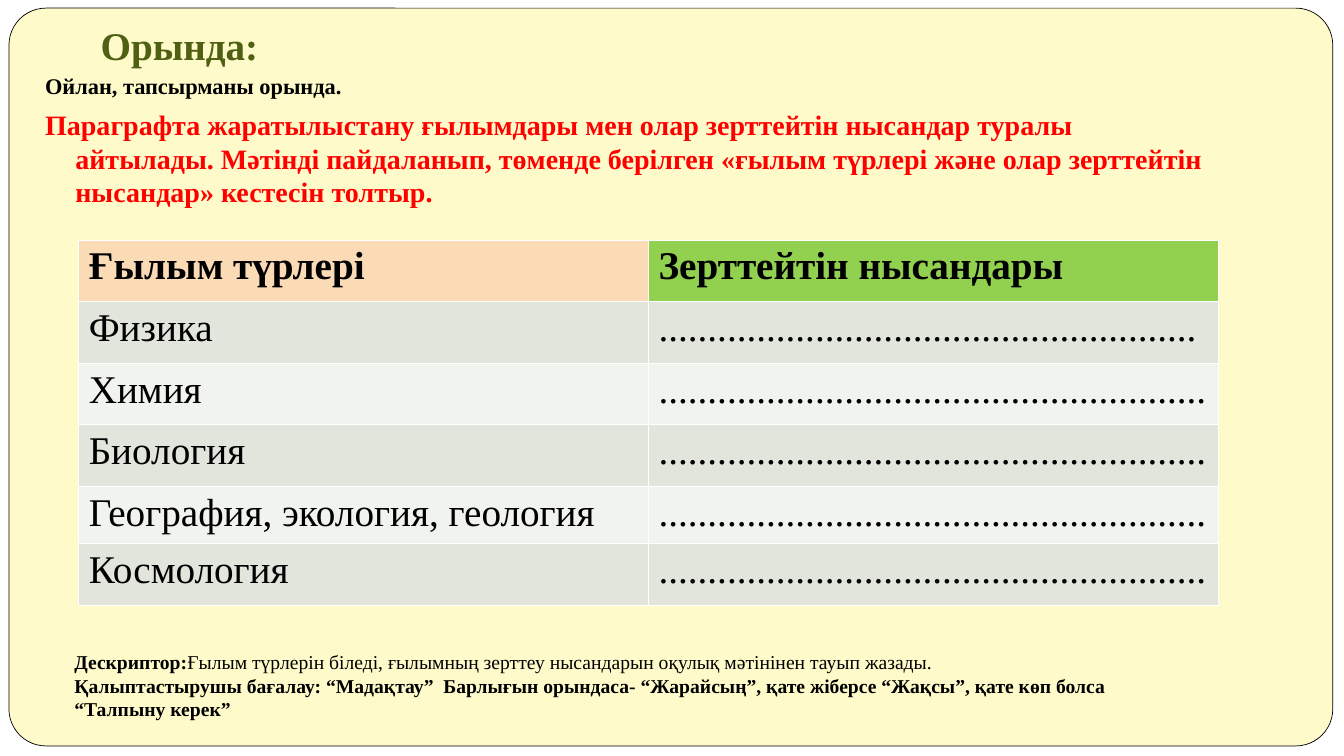
from dataclasses import dataclass

from pptx import Presentation, util as u
from pptx.dml.color import RGBColor
from pptx.enum import shapes, text
from pptx.oxml import parse_xml
from pptx.oxml.ns import nsdecls


@dataclass(frozen=True)
class Theme:
    font: str = "Times New Roman"
    paper: str = "FEFAC9"
    ink: str = "000000"
    heading: str = "4F6013"
    task: str = "FF0000"
    rule: str = "FFFFFF"
    header_fills: tuple = ("FADBB5", "92D050")
    band_fills: tuple = ("E1E5DC", "F0F3EE")
    large: int = 28
    medium: int = 20
    normal: int = 16
    small: int = 14
    thin: float = 0.45
    thick: float = 1.47


def write(paragraph, words, size, color, font, bold=False):
    run = paragraph.add_run()
    run.text = words
    run.font.name = font
    run.font.size = u.Pt(size)
    run.font.bold = bold
    run.font.color.rgb = RGBColor.from_string(color)


class Page:
    columns, rows = 48, 27

    def __init__(self, deck, theme):
        self.theme = theme
        self.column = deck.slide_width / self.columns
        self.row = deck.slide_height / self.rows
        self.slide = deck.slides.add_slide(deck.slide_layouts[6])

    def place(self, left, top, width, height):
        return (round(left * self.column), round(top * self.row),
                round(width * self.column), round(height * self.row))

    def frame(self, area, rounding):
        card = self.slide.shapes.add_shape(
            shapes.MSO_SHAPE.ROUNDED_RECTANGLE, *self.place(*area))
        card.adjustments[0] = rounding
        card.shadow.inherit = False
        card.fill.solid()
        card.fill.fore_color.rgb = RGBColor.from_string(self.theme.paper)
        card.line.color.rgb = RGBColor.from_string(self.theme.ink)
        card.line.width = u.Pt(0.5)

    def text(self, area, paragraphs, anchor=text.MSO_ANCHOR.TOP,
             top=0.05, bottom=0.05, before=0, hanging=0):
        body = self.slide.shapes.add_textbox(*self.place(*area)).text_frame
        body.word_wrap = True
        body.vertical_anchor = anchor
        body.margin_top, body.margin_bottom = u.Inches(top), u.Inches(bottom)
        for index, runs in enumerate(paragraphs):
            paragraph = body.add_paragraph() if index else body.paragraphs[0]
            paragraph.space_before = u.Pt(before)
            if hanging:
                properties = paragraph._p.get_or_add_pPr()
                properties.set("marL", str(u.Inches(hanging)))
                properties.set("indent", str(-u.Inches(hanging)))
            for words, style in runs:
                write(paragraph, words, **{"font": self.theme.font,
                                           "color": self.theme.ink, **style})

    def borders(self, cell, top, bottom):
        properties = cell._tc.get_or_add_tcPr()
        widths = {"lnL": self.theme.thin, "lnR": self.theme.thin,
                  "lnT": top, "lnB": bottom}
        for position, (side, width) in enumerate(widths.items()):
            properties.insert(position, parse_xml(
                f'<a:{side} {nsdecls("a")} w="{u.Pt(width)}"><a:solidFill>'
                f'<a:srgbClr val="{self.theme.rule}"/></a:solidFill></a:{side}>'))

    def table(self, area, entries, row_heights):
        theme = self.theme
        grid = self.slide.shapes.add_table(
            len(entries), len(entries[0]), *self.place(*area)).table
        for r, entry in enumerate(entries):
            grid.rows[r].height = round(row_heights[r] * self.row)
            fills = theme.header_fills if r == 0 else [theme.band_fills[(r - 1) % 2]] * 2
            for c, words in enumerate(entry):
                cell = grid.cell(r, c)
                cell.fill.solid()
                cell.fill.fore_color.rgb = RGBColor.from_string(fills[c])
                write(cell.text_frame.paragraphs[0], words, theme.large,
                      theme.ink, theme.font, bold=r == 0)
                self.borders(cell, theme.thick if r == 1 else theme.thin,
                             theme.thick if r == 0 else theme.thin)


def main():
    deck = Presentation()
    deck.slide_width, deck.slide_height = u.Inches(13.34), u.Inches(7.5)
    theme = Theme()
    page = Page(deck, theme)

    page.frame((0.32, 0.29, 47.28, 26.35), rounding=0.05)
    page.text((3.24, 0.79, 40.77, 2.02),
              [[("Орында:", dict(size=theme.large, color=theme.heading, bold=True))]],
              anchor=text.MSO_ANCHOR.BOTTOM, bottom=0.1)

    instruction = "Ойлан, тапсырманы орында."
    assignment = ("Параграфта жаратылыстану ғылымдары мен олар зерттейтін нысандар "
                  "туралы айтылады. Мәтінді пайдаланып, төменде берілген «ғылым "
                  "түрлері және олар зерттейтін нысандар» кестесін толтыр.")
    page.text((1.26, 2.59, 42.53, 17.71),
              [[(instruction, dict(size=theme.normal, bold=True))],
               [(assignment, dict(size=theme.medium, color=theme.task, bold=True))]],
              top=0, before=5.8, hanging=0.3)

    sciences = ["Физика", "Химия", "Биология", "География, экология, геология",
                "Космология"]
    blanks = ["." * (55 if science == "Физика" else 56) for science in sciences]
    page.table((2.81, 8.57, 40.7, 13),
               [("Ғылым түрлері", "Зерттейтін нысандары"), *zip(sciences, blanks)],
               row_heights=[2.2] * 4 + [2.05, 2.2])

    strong = dict(size=theme.small, bold=True)
    descriptor = ("Ғылым түрлерін біледі, ғылымның зерттеу нысандарын оқулық "
                  "мәтінінен тауып жазады.")
    grading = ("Қалыптастырушы бағалау: “Мадақтау”  Барлығын орындаса- “Жарайсың”, "
               "қате жіберсе “Жақсы”, қате көп болса “Талпыну керек”")
    page.text((2.3, 23.04, 37.93, 2.88),
              [[("Дескриптор:", strong), (descriptor, dict(size=theme.small))],
               [(grading, strong)]])

    deck.save("out.pptx")


if __name__ == "__main__":
    main()
